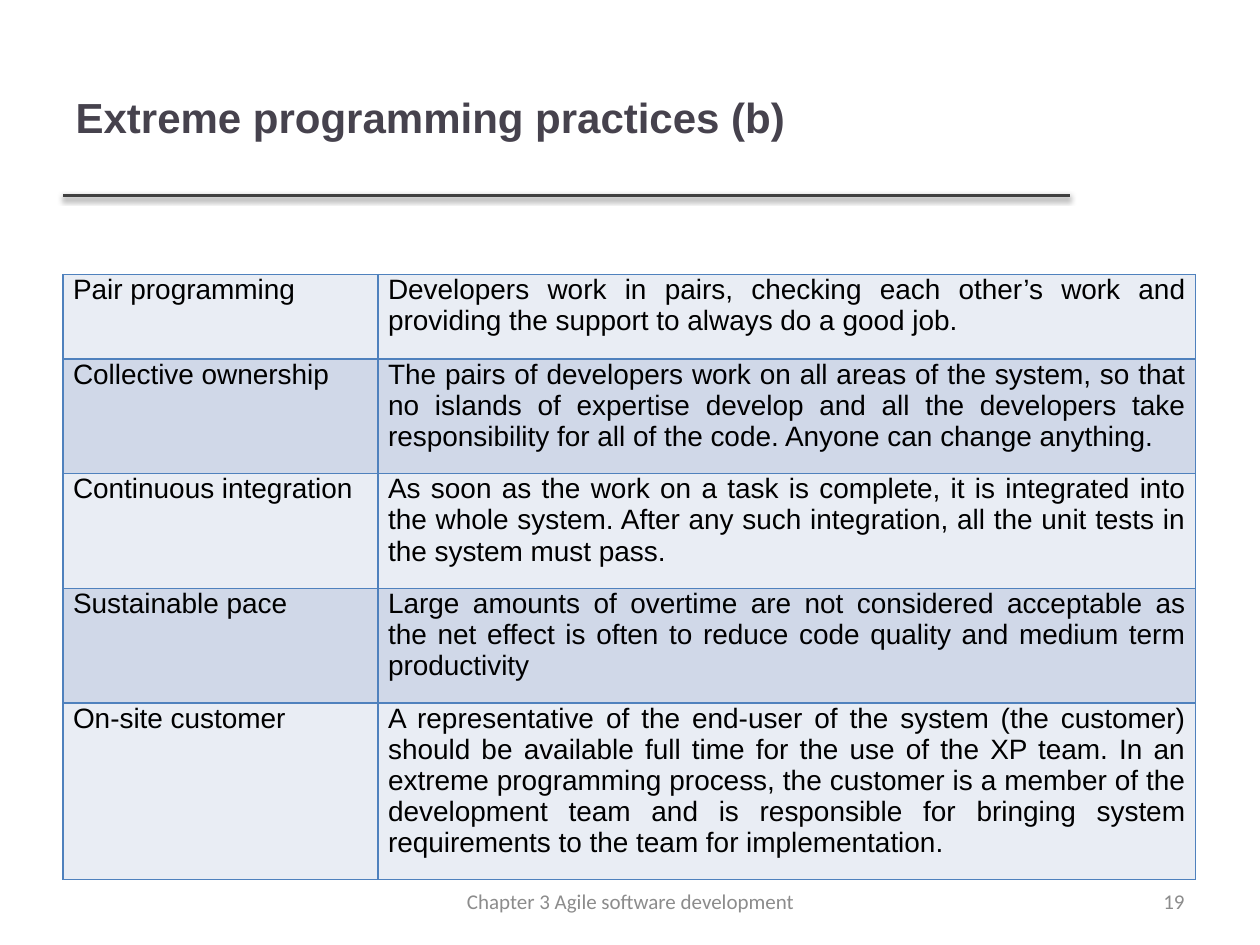
from typing import NamedTuple

from lxml import etree
from pptx import Presentation
from pptx.dml.color import RGBColor
from pptx.enum.shapes import MSO_CONNECTOR
from pptx.enum.text import MSO_ANCHOR, PP_ALIGN
from pptx.oxml import parse_xml
from pptx.oxml.ns import nsdecls, qn
from pptx.util import Inches, Pt

LEFT, RIGHT, MID, JUST = PP_ALIGN.LEFT, PP_ALIGN.RIGHT, PP_ALIGN.CENTER, PP_ALIGN.JUSTIFY
CENTER, TOP = MSO_ANCHOR.MIDDLE, MSO_ANCHOR.TOP
LINE = MSO_CONNECTOR.STRAIGHT

INK = RGBColor(0x46, 0x42, 0x4D)
BLACK = RGBColor(0x00, 0x00, 0x00)
GREY = RGBColor(0x8C, 0x8C, 0x8C)
RULE = RGBColor(0x40, 0x40, 0x40)
EDGE = RGBColor(0x4F, 0x81, 0xBD)
BANDS = (RGBColor(0xE9, 0xED, 0xF4), RGBColor(0xD0, 0xD8, 0xE8))

WIDE, HIGH = 10, 7.5
EDGE_X = 0.05 * WIDE
HEAD = {"name": "Arial", "size": Pt(24), "bold": True}
BODY = {"name": "Arial", "size": Pt(16), "bold": False}
FOOT = {"name": "Calibri", "size": Pt(12), "bold": False}
INSETS = {"margin_left": Inches(0.08), "margin_right": Inches(0.08),
          "margin_top": 0, "margin_bottom": Inches(0.1)}


class Box(NamedTuple):
    left: float
    top: float
    width: float
    height: float

    def emu(self) -> list:
        return [Inches(size) for size in self]


class Row(NamedTuple):
    name: str
    text: str
    height: float


class Note(NamedTuple):
    text: str
    box: Box
    align: int


COLS = (2.5, 6.49)
ROWS = (
    Row("Pair programming",
        "Developers work in pairs, checking each other’s work and providing "
        "the support to always do a good job.", 0.67),
    Row("Collective ownership",
        "The pairs of developers work on all areas of the system, so that no "
        "islands of expertise develop and all the developers take "
        "responsibility for all of the code. Anyone can change anything.", 0.91),
    Row("Continuous integration",
        "As soon as the work on a task is complete, it is integrated into the "
        "whole system. After any such integration, all the unit tests in the "
        "system must pass.", 0.91),
    Row("Sustainable pace",
        "Large amounts of overtime are not considered acceptable as the net "
        "effect is often to reduce code quality and medium term productivity",
        0.91),
    Row("On-site customer",
        "A representative of the end-user of the system (the customer) should "
        "be available full time for the use of the XP team. In an extreme "
        "programming process, the customer is a member of the development team "
        "and is responsible for bringing system requirements to the team for "
        "implementation.", 1.4),
)
NOTES = (
    Note("19", Box(7.17, 6.95, 2.33, 0.4), RIGHT),
    Note("Chapter 3 Agile software development", Box(3.42, 6.95, 3.17, 0.4), MID),
)


def apply(item, form: dict) -> None:
    for name, value in form.items():
        setattr(item, name, value)


def write(frame, text: str, form: dict, color: RGBColor, align: int) -> None:
    frame.text = text
    frame.word_wrap = True
    para = frame.paragraphs[0]
    para.alignment = align
    font = para.runs[0].font
    apply(font, form)
    font.color.rgb = color


def draw_rule(slide) -> None:
    y = Inches(1.55)
    rule = slide.shapes.add_connector(LINE, Inches(EDGE_X), y, Inches(8.49), y)
    rule.line.color.rgb = RULE
    rule.line.width = Pt(2)
    rule._element.spPr.append(parse_xml(
        f'<a:effectLst {nsdecls("a")}>'
        f'<a:outerShdw blurRad="{Pt(3.1)}" dist="{Pt(1.6)}" dir="5400000" '
        'rotWithShape="0"><a:srgbClr val="000000"><a:alpha val="38000"/>'
        '</a:srgbClr></a:outerShdw></a:effectLst>'))


def draw_title(slide, text: str) -> None:
    title = slide.shapes.title
    spots = Box(EDGE_X, 0.3, 7.98, 1.25).emu()
    apply(title, dict(zip(("left", "top", "width", "height"), spots)))
    write(title.text_frame, text, HEAD, INK, LEFT)
    title.text_frame.vertical_anchor = CENTER


def draw_edges(cell) -> None:
    props = cell._tc.get_or_add_tcPr()
    for spot, side in enumerate(("lnL", "lnR", "lnT", "lnB")):
        edge = etree.Element(qn(f"a:{side}"), w=str(Pt(1)))
        fill = etree.SubElement(edge, qn("a:solidFill"))
        etree.SubElement(fill, qn("a:srgbClr"), val=str(EDGE))
        props.insert(spot, edge)


def draw_table(slide) -> None:
    box = Box(EDGE_X, 2.18, sum(COLS), sum(row.height for row in ROWS))
    table = slide.shapes.add_table(len(ROWS), len(COLS), *box.emu()).table
    table.first_row = False
    for col, width in zip(table.columns, COLS):
        col.width = Inches(width)
    for i, row in enumerate(ROWS):
        table.rows[i].height = Inches(row.height)
        for j, text in enumerate((row.name, row.text)):
            cell = table.cell(i, j)
            write(cell.text_frame, text, BODY, BLACK, JUST)
            apply(cell, INSETS | {"vertical_anchor": TOP})
            cell.fill.solid()
            cell.fill.fore_color.rgb = BANDS[i % 2]
            draw_edges(cell)


def draw_note(slide, note: Note) -> None:
    frame = slide.shapes.add_textbox(*note.box.emu()).text_frame
    write(frame, note.text, FOOT, GREY, note.align)
    frame.vertical_anchor = CENTER


def main() -> None:
    deck = Presentation()
    apply(deck, {"slide_width": Inches(WIDE), "slide_height": Inches(HIGH)})
    slide = deck.slides.add_slide(deck.slide_layouts[5])
    draw_rule(slide)
    draw_title(slide, "Extreme programming practices (b)")
    draw_table(slide)
    for note in NOTES:
        draw_note(slide, note)
    deck.save("out.pptx")


if __name__ == "__main__":
    main()
